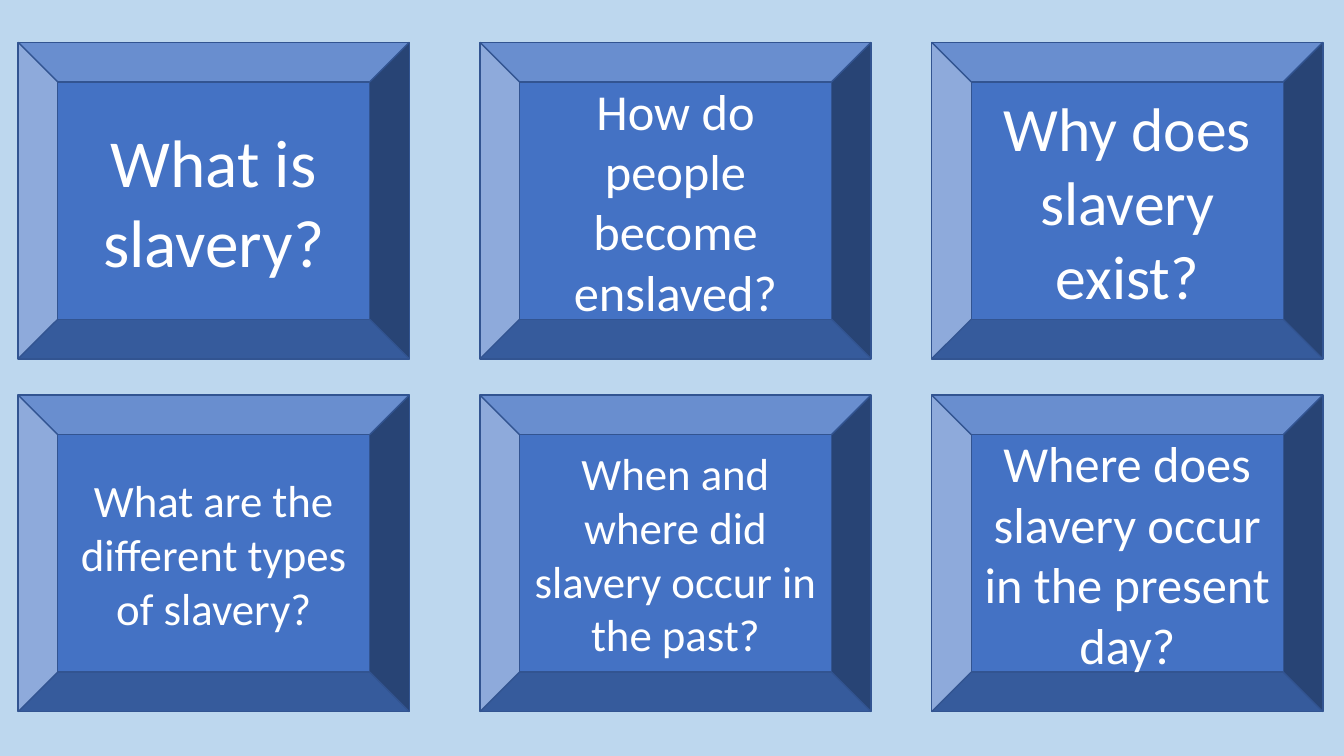
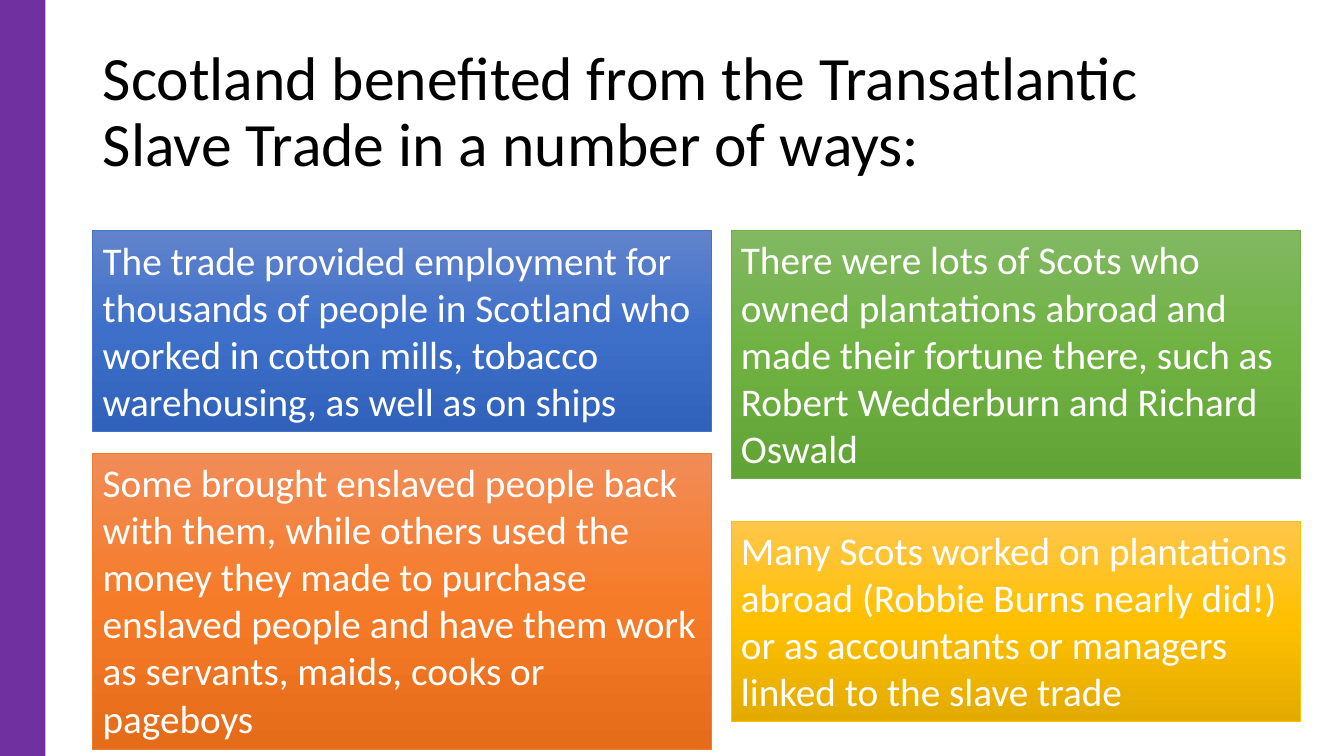
"""Build two slides on slavery and Scotland's part in the slave trade."""
from copy import deepcopy
from dataclasses import dataclass

from pptx import Presentation
from pptx import util as u
from pptx.dml.color import RGBColor
from pptx.enum import shapes, text
from pptx.oxml.ns import qn


@dataclass(frozen=True)
class Theme:
    """Colours, type sizes and measures that the slides share."""
    font: str = "Calibri"
    ink: str = "000000"
    light: str = "FFFFFF"
    sky: str = "BDD7EE"
    card: str = "4472C4"
    card_edge: str = "325491"
    band: str = "7030A0"
    blue: tuple = ("4472C4", "6183CB", "3E70CA", "3062BB")
    orange: tuple = ("ED7D31", "F18C57", "F67B28", "E56C19")
    green: tuple = ("70AD47", "81B861", "6FB242", "62A336")
    gold: tuple = ("FFC000", "FFC64B", "FFC000", "E3AB00")
    title_size: int = 44
    panel_size: int = 28
    width: float = 13.33
    height: float = 7.5


THEME = Theme()
TITLE_ONLY, BLANK = 5, 6

QUESTIONS = (
    (("What is slavery?", 48),
     ("How do people become enslaved?", 36),
     ("Why does slavery exist?", 44)),
    (("What are the different types of slavery?", 32),
     ("When and where did slavery occur in the past?", 32),
     ("Where does slavery occur in the present day?", 36)),
)

TITLE = "Scotland benefited from the Transatlantic Slave Trade in a number of ways:"
LEFT_PANELS = (
    ("The trade provided employment for thousands of people in Scotland who "
     "worked in cotton mills, tobacco warehousing, as well as on ships",
     THEME.blue, 1.99),
    ("Some brought enslaved people back with them, while others used the money "
     "they made to purchase enslaved people and have them work as servants, "
     "maids, cooks or pageboys", THEME.orange, 2.93),
)
RIGHT_PANELS = (
    ("There were lots of Scots who owned plantations abroad and made their "
     "fortune there, such as Robert Wedderburn and Richard Oswald",
     THEME.green, 2.46),
    ("Many Scots worked on plantations abroad (Robbie Burns nearly did!) or as "
     "accountants or managers linked to the slave trade", THEME.gold, 1.99),
)


def colour(code):
    """Turn a hex code into a colour."""
    return RGBColor.from_string(code)


def add_box(page, kind, left, top, width, height, fill=None, edge=None, weight=1):
    """Add a preset shape without shadow, with an optional fill and outline."""
    box = page.shapes.add_shape(
        kind, *(u.Inches(length) for length in (left, top, width, height)))
    box.shadow.inherit = False
    if fill:
        box.fill.solid()
        box.fill.fore_color.rgb = colour(fill)
    if edge:
        box.line.color.rgb = colour(edge)
        box.line.width = u.Pt(weight)
    else:
        box.line.fill.background()
    return box


def write(box, words, size, ink, align, anchor):
    """Put one formatted paragraph into a shape."""
    frame = box.text_frame
    frame.text = words
    frame.word_wrap = True
    frame.vertical_anchor = anchor
    para = frame.paragraphs[0]
    para.alignment = align
    span = para.runs[0]
    span.font.name = THEME.font
    span.font.size = u.Pt(size)
    span.font.color.rgb = colour(ink)
    return frame


def shade(box, codes):
    """Fill a shape with evenly spaced colours from top to bottom."""
    box.fill.gradient()
    box.fill.gradient_angle = 270
    stops = next(box.fill._xPr.iter(qn("a:gsLst")))
    while len(stops) < len(codes):
        stops.append(deepcopy(stops[0]))
    for index, (stop, code) in enumerate(zip(box.fill.gradient_stops, codes)):
        stop.position = index / (len(codes) - 1)
        stop.color.rgb = colour(code)


def add_cards(page, lefts, top, row_step, width, height):
    """Lay out the question cards in rows and columns."""
    for row, questions in enumerate(QUESTIONS):
        for left, (words, size) in zip(lefts, questions):
            card = add_box(page, shapes.MSO_SHAPE.BEVEL, left, top + row * row_step,
                           width, height, THEME.card, THEME.card_edge)
            write(card, words, size, THEME.light,
                  text.PP_ALIGN.CENTER, text.MSO_ANCHOR.MIDDLE)


def add_title(page, left, top, width, height):
    """Place and format the title placeholder."""
    title = page.shapes.title
    title.left, title.top = u.Inches(left), u.Inches(top)
    title.width, title.height = u.Inches(width), u.Inches(height)
    frame = write(title, TITLE, THEME.title_size, THEME.ink,
                  text.PP_ALIGN.LEFT, text.MSO_ANCHOR.MIDDLE)
    frame.auto_size = text.MSO_AUTO_SIZE.NONE
    frame.paragraphs[0].line_spacing = 0.9


def add_panels(page, panels, left, top, width, gap):
    """Stack shaded text panels down one column."""
    for words, (edge, *codes), height in panels:
        panel = add_box(page, shapes.MSO_SHAPE.RECTANGLE, left, top, width, height,
                        edge=edge, weight=0.5)
        shade(panel, codes)
        frame = write(panel, words, THEME.panel_size, THEME.light,
                      text.PP_ALIGN.LEFT, text.MSO_ANCHOR.TOP)
        frame.auto_size = text.MSO_AUTO_SIZE.SHAPE_TO_FIT_TEXT
        top += height + gap


def build_questions(deck):
    """Build the slide of question cards."""
    page = deck.slides.add_slide(deck.slide_layouts[BLANK])
    add_box(page, shapes.MSO_SHAPE.RECTANGLE, 0, 0, THEME.width, THEME.height, THEME.sky)
    add_cards(page, (0.18, 4.76, 9.24), 0.42, 3.5, 3.88, 3.14)


def build_benefits(deck):
    """Build the slide on how Scotland benefited."""
    page = deck.slides.add_slide(deck.slide_layouts[TITLE_ONLY])
    add_title(page, 0.92, 0.4, 11.5, 1.45)
    add_panels(page, LEFT_PANELS, 0.92, 2.29, 6.14, 0.22)
    add_panels(page, RIGHT_PANELS, 7.25, 2.29, 5.65, 0.42)
    add_box(page, shapes.MSO_SHAPE.RECTANGLE, 0, 0, 0.45, THEME.height, THEME.band)


def main():
    """Build and save the deck."""
    deck = Presentation()
    deck.slide_width = u.Inches(THEME.width)
    deck.slide_height = u.Inches(THEME.height)
    build_questions(deck)
    build_benefits(deck)
    deck.save("out.pptx")


if __name__ == "__main__":
    main()
